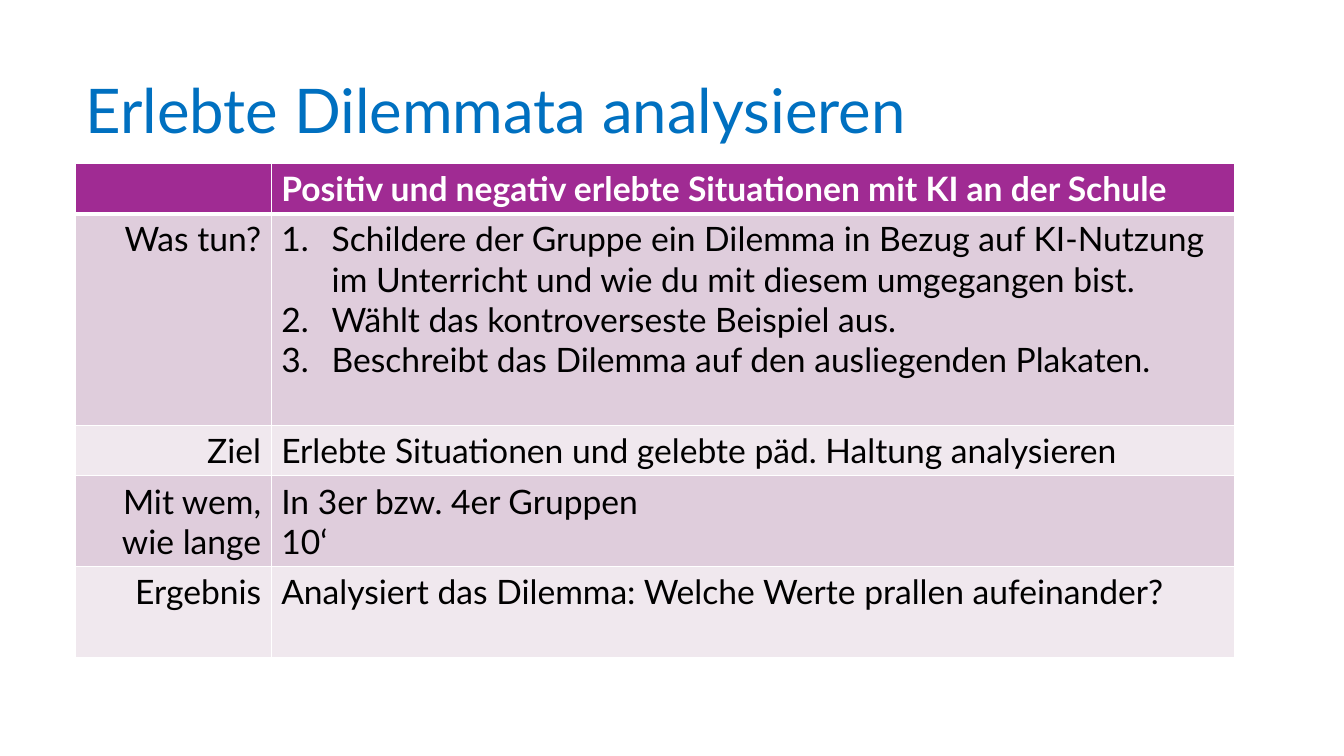
"""Build a slide with a task table on dilemmas experienced with AI at school."""
from lxml.etree import SubElement
from pptx import Presentation
from pptx.dml.color import RGBColor
from pptx.enum.text import MSO_ANCHOR, PP_ALIGN
from pptx.oxml import parse_xml
from pptx.oxml.ns import nsdecls, qn
from pptx.util import Inches, Pt

BLUE = RGBColor(0x00, 0x70, 0xC0)
PURPLE = RGBColor(0xA0, 0x2B, 0x93)
MAUVE = RGBColor(0xDF, 0xCD, 0xDC)
PALE = RGBColor(0xF0, 0xE8, 0xEE)
WHITE = RGBColor(0xFF, 0xFF, 0xFF)
BLACK = RGBColor(0x00, 0x00, 0x00)
FONT = "Lato"
COLUMN_WIDTHS = [1.94, 9.56]
ROW_HEIGHTS = [0.5, 2.1, 0.5, 0.9, 0.9]
STEPS_ROW = 1
ROWS = [
    ("", ["Positiv und negativ erlebte Situationen mit KI an der Schule"]),
    ("Was tun?", [
        "Schildere der Gruppe ein Dilemma in Bezug auf KI-Nutzung im Unterricht "
        "und wie du mit diesem umgegangen bist.",
        "Wählt das kontroverseste Beispiel aus.",
        "Beschreibt das Dilemma auf den ausliegenden Plakaten.",
    ]),
    ("Ziel", ["Erlebte Situationen und gelebte päd. Haltung analysieren"]),
    ("Mit wem, wie lange", ["In 3er bzw. 4er Gruppen", "10‘"]),
    ("Ergebnis", ["Analysiert das Dilemma: Welche Werte prallen aufeinander?"]),
]


def style_font(paragraph, size, color, bold=False):
    """Set the font of a whole paragraph."""
    font = paragraph.font
    font.name = FONT
    font.size = Pt(size)
    font.bold = bold
    font.color.rgb = color


def add_title(page, text):
    """Add the slide title."""
    box = page.shapes.add_textbox(Inches(0.75), Inches(0.4), Inches(11.67), Inches(1.45))
    frame = box.text_frame
    frame.word_wrap = True
    frame.vertical_anchor = MSO_ANCHOR.MIDDLE
    para = frame.paragraphs[0]
    para.text = text
    para.line_spacing = 0.9
    style_font(para, 44, BLUE)


def number_paragraph(paragraph):
    """Turn a paragraph into an automatically numbered item."""
    properties = paragraph._p.get_or_add_pPr()
    properties.set("marL", str(Inches(0.5)))
    properties.set("indent", str(-Inches(0.5)))
    SubElement(properties, qn("a:buAutoNum"), type="arabicPeriod")


def set_borders(cell, bottom_width):
    """Draw white borders around a cell."""
    properties = cell._tc.get_or_add_tcPr()
    widths = {"lnL": 1, "lnR": 1, "lnT": 1, "lnB": bottom_width}
    for position, (side, width) in enumerate(widths.items()):
        line = parse_xml(
            f'<a:{side} {nsdecls("a")} w="{Pt(width)}"><a:solidFill>'
            f'<a:srgbClr val="{WHITE}"/></a:solidFill></a:{side}>'
        )
        properties.insert(position, line)


def fill_cell(cell, lines, row, align):
    """Write the lines of a cell and style it according to its row."""
    header = row == 0
    cell.fill.solid()
    cell.fill.fore_color.rgb = PURPLE if header else MAUVE if row % 2 else PALE
    set_borders(cell, 3 if header else 1)
    cell.text = "\n".join(lines)
    for para in cell.text_frame.paragraphs:
        para.alignment = align
        if row == STEPS_ROW and align == PP_ALIGN.LEFT:
            number_paragraph(para)
        style_font(para, 24, WHITE if header else BLACK, header)


def add_task_table(page):
    """Add the table of labels and tasks."""
    frame = page.shapes.add_table(
        len(ROWS), len(COLUMN_WIDTHS), Inches(0.75), Inches(1.62),
        Inches(sum(COLUMN_WIDTHS)), Inches(sum(ROW_HEIGHTS)),
    )
    table = frame.table
    for column, width in zip(table.columns, COLUMN_WIDTHS):
        column.width = Inches(width)
    for row, (height, (label, lines)) in enumerate(zip(ROW_HEIGHTS, ROWS)):
        table.rows[row].height = Inches(height)
        fill_cell(table.cell(row, 0), [label], row, PP_ALIGN.RIGHT)
        fill_cell(table.cell(row, 1), lines, row, PP_ALIGN.LEFT)


def main():
    """Create and save the deck."""
    deck = Presentation()
    deck.slide_width = Inches(13.33)
    deck.slide_height = Inches(7.5)
    page = deck.slides.add_slide(deck.slide_layouts[6])
    add_title(page, "Erlebte Dilemmata analysieren")
    add_task_table(page)
    deck.save("out.pptx")


if __name__ == "__main__":
    main()
